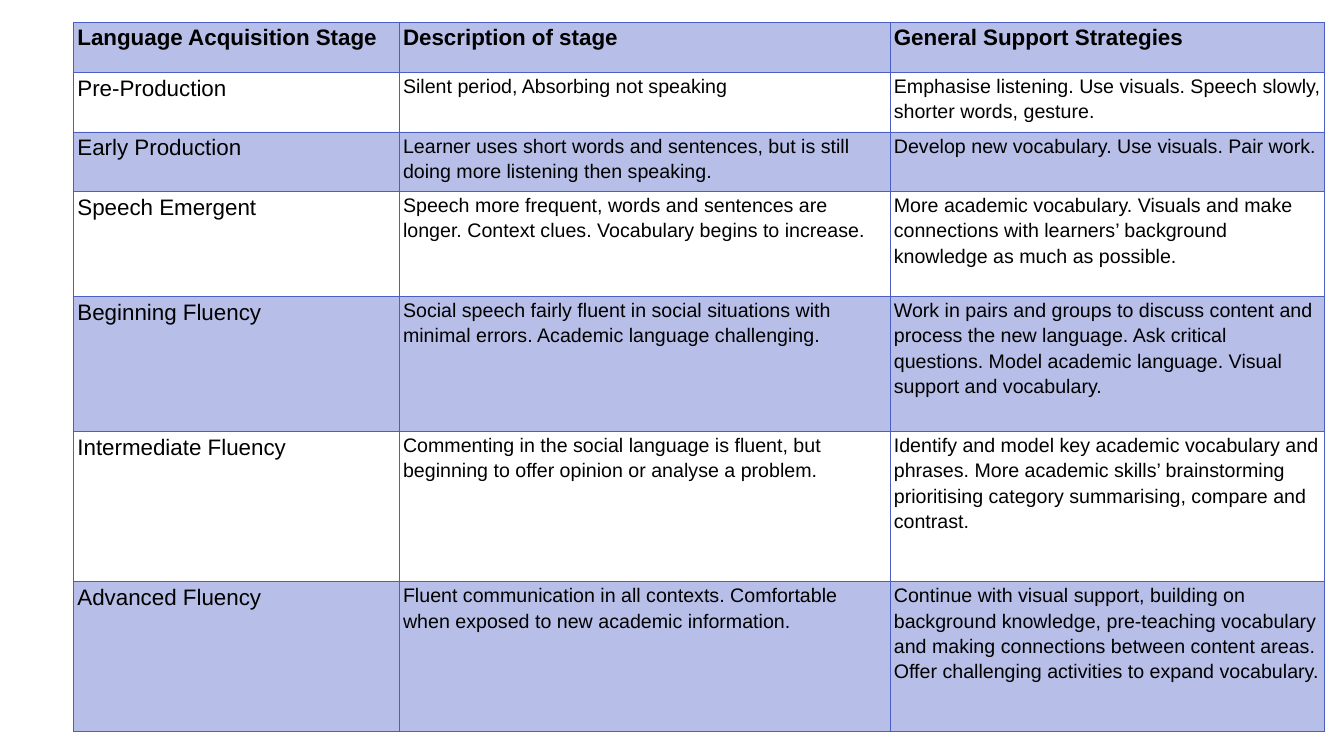
from lxml.etree import SubElement
from pptx import Presentation
from pptx.dml.color import RGBColor
from pptx.enum.text import MSO_ANCHOR
from pptx.oxml import parse_xml
from pptx.oxml.ns import nsdecls, qn
from pptx.util import Pt

INK = RGBColor(0x00, 0x00, 0x00)
BLUE = RGBColor(0x4B, 0x5E, 0xC4)
LEFT, TOP = 52.6, 15.8
WIDTHS = [232.6, 350.6, 310.3]
HEIGHTS = [36, 42.5, 42.5, 74.9, 96.5, 107.3, 107.3]
INSET = {
    "margin_left": Pt(2.7),
    "margin_right": Pt(2.7),
    "margin_top": 0,
    "margin_bottom": 0,
    "vertical_anchor": MSO_ANCHOR.TOP,
}
HEAD = {"name": "Arial", "size": Pt(16), "bold": True}
STAGE = {"name": "Arial", "size": Pt(16), "bold": False}
BODY = {"name": "Arial", "size": Pt(14), "bold": False}
ROWS = [
    ("Language Acquisition Stage", "Description of stage", "General Support Strategies"),
    ("Pre-Production",
     "Silent period, Absorbing not speaking",
     "Emphasise listening. Use visuals. Speech slowly, shorter words, gesture."),
    ("Early Production",
     "Learner uses short words and sentences, but is still doing more listening "
     "then speaking.",
     "Develop new vocabulary. Use visuals. Pair work."),
    ("Speech Emergent",
     "Speech more frequent, words and sentences are longer. Context clues. "
     "Vocabulary begins to increase.",
     "More academic vocabulary. Visuals and make connections with learners’ "
     "background knowledge as much as possible."),
    ("Beginning Fluency",
     "Social speech fairly fluent in social situations with minimal errors. "
     "Academic language challenging.",
     "Work in pairs and groups to discuss content and process the new language. "
     "Ask critical questions. Model academic language. Visual support and vocabulary."),
    ("Intermediate Fluency",
     "Commenting in the social language is fluent, but beginning to offer opinion "
     "or analyse a problem.",
     "Identify and model key academic vocabulary and phrases. More academic skills’ "
     "brainstorming prioritising category summarising, compare and contrast."),
    ("Advanced Fluency",
     "Fluent communication in all contexts. Comfortable when exposed to new "
     "academic information.",
     "Continue with visual support, building on background knowledge, pre-teaching "
     "vocabulary and making connections between content areas. Offer challenging "
     "activities to expand vocabulary."),
]


def style(item, look):
    """Set each format value on the item."""
    for name, value in look.items():
        setattr(item, name, value)


def border(cell):
    """Draw a thin line on all four sides of a cell."""
    props = cell._tc.get_or_add_tcPr()
    for spot, side in enumerate("LRTB"):
        props.insert(spot, parse_xml(
            f'<a:ln{side} {nsdecls("a")} w="{Pt(0.75)}"><a:solidFill>'
            f'<a:srgbClr val="{BLUE}"/></a:solidFill></a:ln{side}>'))


def shade(cell, tinted):
    """Give a cell a light tint or leave it clear."""
    if not tinted:
        cell.fill.background()
        return
    cell.fill.solid()
    cell.fill.fore_color.rgb = BLUE
    color = cell._tc.tcPr.find(f"{qn('a:solidFill')}/{qn('a:srgbClr')}")
    SubElement(color, qn("a:alpha"), val="40000")


def write(cell, text, look):
    """Put formatted text in a cell."""
    style(cell, INSET)
    para = cell.text_frame.paragraphs[0]
    para.line_spacing = 1.15
    run = para.add_run()
    run.text = text
    style(run.font, look)
    run.font.color.rgb = INK


def add_grid(slide):
    """Build the table of language stages."""
    frame = slide.shapes.add_table(
        len(ROWS), len(WIDTHS), Pt(LEFT), Pt(TOP), Pt(sum(WIDTHS)), Pt(sum(HEIGHTS)))
    table = frame.table
    for column, width in zip(table.columns, WIDTHS):
        column.width = Pt(width)
    for row, height in zip(table.rows, HEIGHTS):
        row.height = Pt(height)
    for r, texts in enumerate(ROWS):
        for c, text in enumerate(texts):
            cell = table.cell(r, c)
            look = HEAD if r == 0 else STAGE if c == 0 else BODY
            write(cell, text, look)
            shade(cell, r % 2 == 0)
            border(cell)


def main():
    """Make the deck and save it."""
    deck = Presentation()
    style(deck, {"slide_width": Pt(960), "slide_height": Pt(540)})
    add_grid(deck.slides.add_slide(deck.slide_layouts[6]))
    deck.save("out.pptx")


if __name__ == "__main__":
    main()
